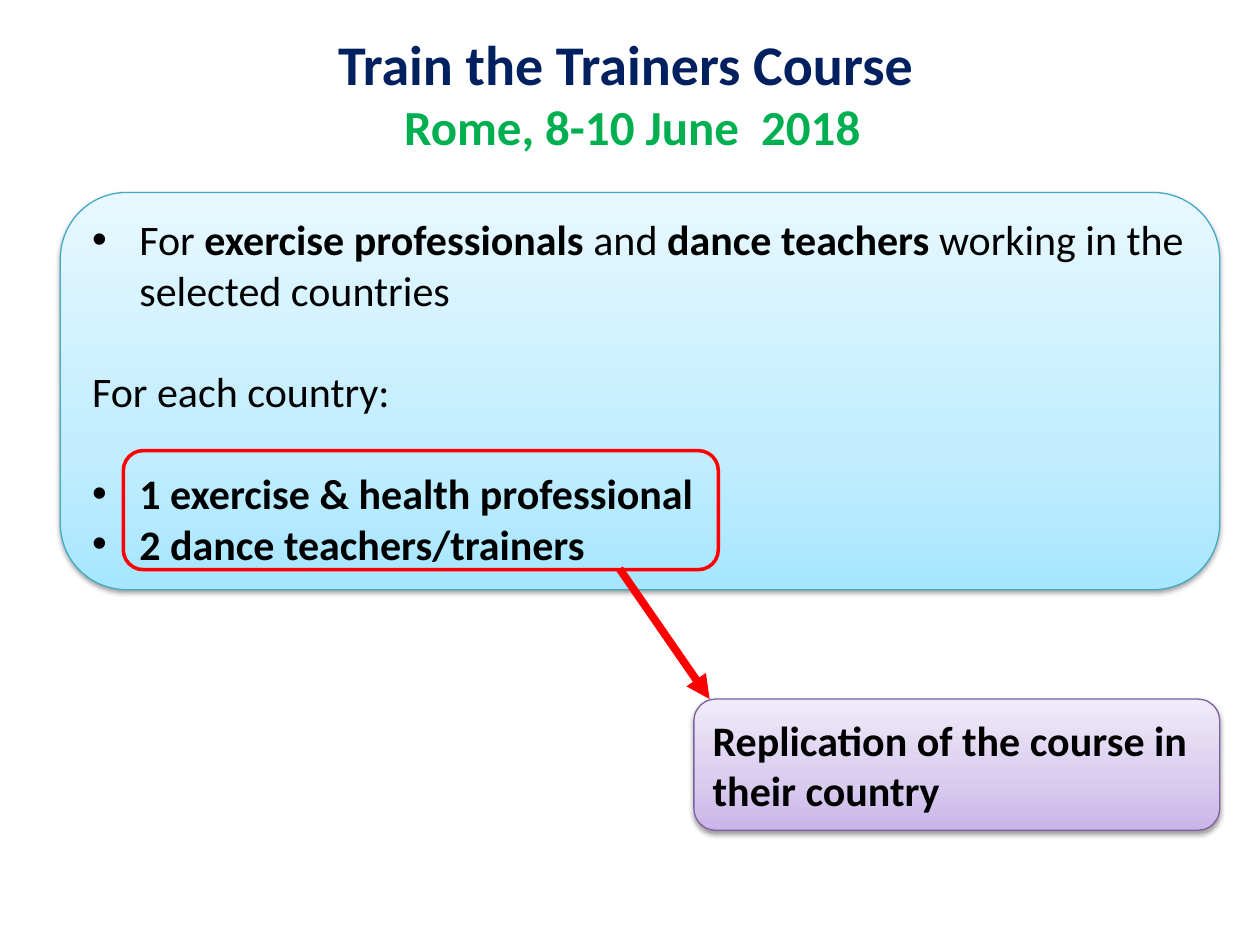
from copy import deepcopy
from dataclasses import dataclass

from lxml import etree
from pptx import Presentation
from pptx.dml.color import RGBColor
from pptx.enum import shapes, text
from pptx.oxml import ns
from pptx.util import Pt


@dataclass(frozen=True)
class Theme:
    font: str = "Calibri"
    title_size: float = 32
    date_size: float = 28
    body_size: float = 24
    blank_line: float = 29.3
    indent: float = 27
    navy: str = "002060"
    green: str = "00B050"
    black: str = "000000"
    red: str = "FF0000"
    blue_line: str = "46AAC5"
    purple_line: str = "7D60A0"
    # Gradients run from the bottom edge to the top edge
    blue_fill: tuple = ((0, "A7E6FF"), (0.35, "C1EDFF"), (1, "E7F8FF"))
    purple_fill: tuple = ((0, "C9B5E8"), (0.35, "D8CBEE"), (1, "F0EAF9"))


THEME = Theme()


def rgb(code):
    return RGBColor.from_string(code)


def add_child(parent, tag, **attributes):
    return etree.SubElement(parent, ns.qn(tag), attributes)


def style_font(para, size, color, bold=None):
    font = para.font
    font.name, font.size, font.bold = THEME.font, Pt(size), bold
    font.color.rgb = rgb(color)


def set_title(page, lines, left, top, width, height):
    title = page.shapes.title
    title.left, title.top, title.width, title.height = map(Pt, (left, top, width, height))
    frame = title.text_frame
    frame.auto_size = text.MSO_AUTO_SIZE.NONE
    frame.vertical_anchor = text.MSO_ANCHOR.TOP
    frame.text = "\n".join(line for line, _, _ in lines)
    for para, (_, size, color) in zip(frame.paragraphs, lines):
        para.alignment = text.PP_ALIGN.CENTER
        style_font(para, size, color, bold=True)


def add_rounded_box(page, left, top, width, height, line, line_width):
    box = page.shapes.add_shape(shapes.MSO_SHAPE.ROUNDED_RECTANGLE,
                                *map(Pt, (left, top, width, height)))
    box.shadow.inherit = False
    box.fill.background()
    box.line.color.rgb = rgb(line)
    box.line.width = Pt(line_width)
    return box


def fill_gradient(box, stops):
    box.fill.gradient()
    box.fill.gradient_angle = 90
    stop_list = box._element.spPr.find(".//" + ns.qn("a:gsLst"))
    while len(stop_list) < len(stops):
        stop_list.append(deepcopy(stop_list[-1]))
    for stop, (position, color) in zip(box.fill.gradient_stops, stops):
        stop.position = position
        stop.color.rgb = rgb(color)


def drop_shadow(box):
    effects = box._element.spPr.find(ns.qn("a:effectLst"))
    shadow = add_child(effects, "a:outerShdw", blurRad=str(Pt(3.1)), dist=str(Pt(1.6)),
                       dir="5400000", rotWithShape="0")
    color = add_child(shadow, "a:srgbClr", val=THEME.black)
    add_child(color, "a:alpha", val="38000")


def add_card(page, left, top, width, height, line, stops, paragraphs):
    """Each paragraph is (bulleted, space before, [(words, bold), ...])."""
    card = add_rounded_box(page, left, top, width, height, line, 0.75)
    fill_gradient(card, stops)
    drop_shadow(card)
    frame = card.text_frame
    frame.word_wrap = True
    frame.vertical_anchor = text.MSO_ANCHOR.MIDDLE
    for index, (bulleted, space, spans) in enumerate(paragraphs):
        para = frame.add_paragraph() if index else frame.paragraphs[0]
        para.alignment = text.PP_ALIGN.LEFT
        para.space_before = Pt(space)
        style_font(para, THEME.body_size, THEME.black)
        if bulleted:
            add_bullet(para)
        for words, bold in spans:
            span = para.add_run()
            span.text = words
            span.font.bold = bold


def add_bullet(para):
    props = para._p.get_or_add_pPr()
    props.set("marL", str(Pt(THEME.indent)))
    props.set("indent", str(-Pt(THEME.indent)))
    font = etree.Element(ns.qn("a:buFont"), typeface="Arial")
    mark = etree.Element(ns.qn("a:buChar"), char="•")
    defaults = props.find(ns.qn("a:defRPr"))
    defaults.addprevious(font)
    defaults.addprevious(mark)


def add_arrow(page, start, end, color, width):
    arrow = page.shapes.add_connector(shapes.MSO_CONNECTOR.STRAIGHT,
                                      *map(Pt, (*start, *end)))
    arrow.line.color.rgb = rgb(color)
    arrow.line.width = Pt(width)
    add_child(arrow.line._get_or_add_ln(), "a:tailEnd", type="triangle")
    add_child(arrow._element.spPr, "a:effectLst")


def main():
    deck = Presentation()
    deck.slide_width, deck.slide_height = Pt(720), Pt(540)
    page = deck.slides.add_slide(deck.slide_layouts[5])

    # Course title and date
    set_title(page, [("Train the Trainers Course ", THEME.title_size, THEME.navy),
                     ("Rome, 8-10 June  2018", THEME.date_size, THEME.green)],
              24, 13, 674.5, 80)

    # Participants
    add_card(page, 34.5, 110, 662.5, 227, THEME.blue_line, THEME.blue_fill, [
        (True, 0, [("For ", False), ("exercise professionals ", True), ("and ", False),
                   ("dance teachers ", True),
                   ("working in the selected countries", False)]),
        (False, THEME.blank_line, [("For each country:", False)]),
        (True, THEME.blank_line, [("1 exercise & health professional", True)]),
        (True, 0, [("2 dance teachers/trainers", True)]),
    ])

    # Follow-up in each country
    add_card(page, 396.5, 399.5, 300.5, 75, THEME.purple_line, THEME.purple_fill,
             [(False, 0, [("Replication of the course in their country", True)])])

    # Highlighted trainers and the arrow to their task
    add_rounded_box(page, 70.5, 257.5, 340, 68, THEME.red, 2)
    add_arrow(page, (354, 325), (405.5, 399.5), THEME.red, 4.5)

    deck.save("out.pptx")


if __name__ == "__main__":
    main()
